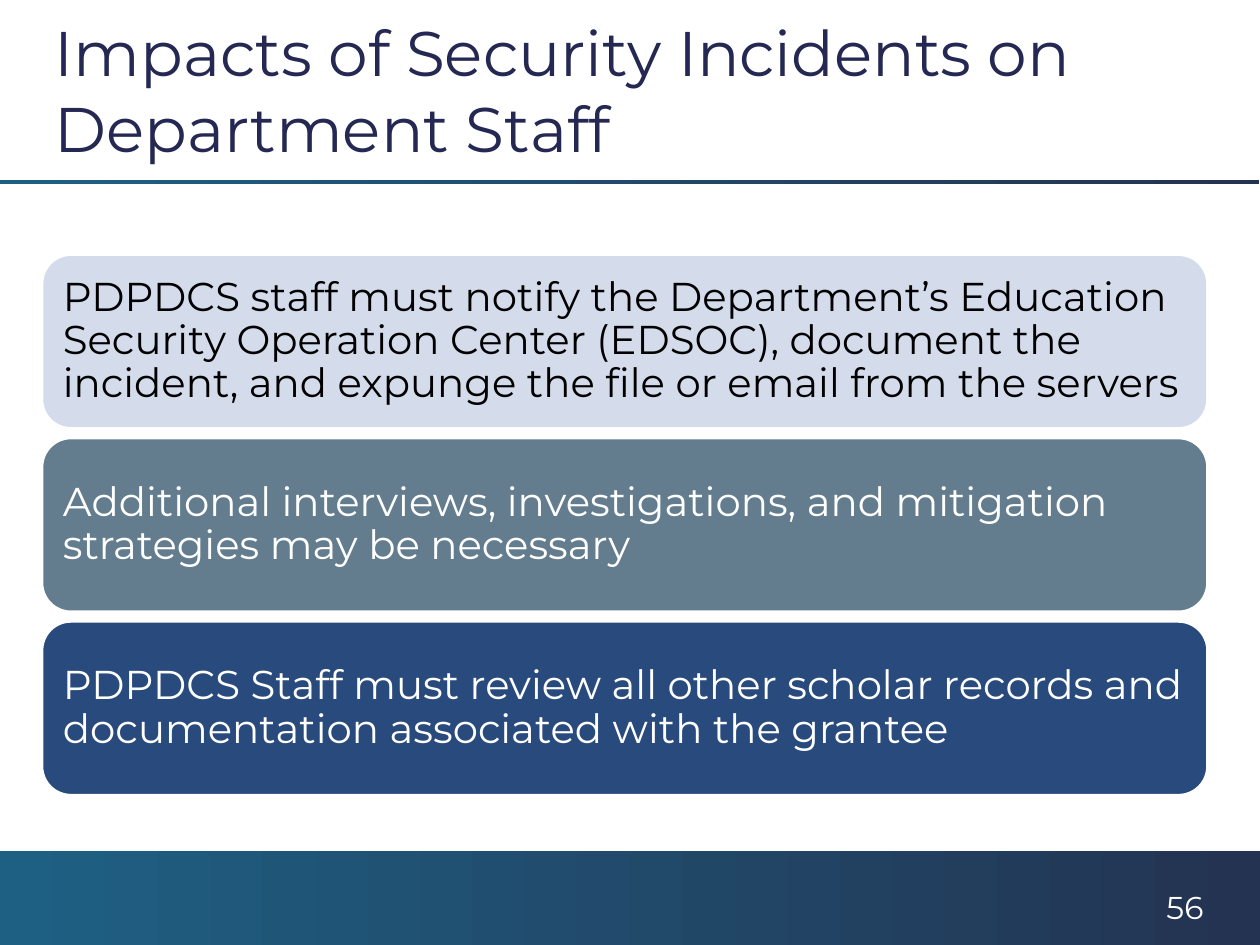
from dataclasses import dataclass
from pptx import Presentation as Deck
from pptx.dml.color import RGBColor as RGB
from pptx.enum.shapes import MSO_SHAPE as Kind
from pptx.enum.text import MSO_ANCHOR as Anchor, MSO_AUTO_SIZE as Fit, PP_ALIGN as Align
from pptx.util import Pt


@dataclass(frozen=True)
class Theme:
    font: str = "Montserrat"
    head: float = 36
    body: float = 23
    page: float = 18
    navy: str = "242852"
    black: str = "000000"
    white: str = "FFFFFF"
    fade: tuple = ("1E6083", "243352")
    cards: tuple = ("D4DCEC", "637D8E", "294A7C")


def write(frame, text, *, font, size, color, space=1, anchor=Anchor.TOP, pad=(7.2, 3.6)):
    frame.word_wrap = True
    frame.auto_size = Fit.NONE
    frame.vertical_anchor = anchor
    frame.margin_left = frame.margin_right = Pt(pad[0])
    frame.margin_top = frame.margin_bottom = Pt(pad[1])
    para = frame.paragraphs[0]
    para.alignment = Align.LEFT
    para.line_spacing = space
    run = para.add_run()
    run.text = text
    run.font.name = font
    run.font.size = Pt(size)
    run.font.color.rgb = RGB.from_string(color)


class Page:
    """Draws styled elements on one slide."""

    def __init__(self, slide, theme):
        self.slide = slide
        self.theme = theme

    def shape(self, kind, box):
        item = self.slide.shapes.add_shape(kind, *map(Pt, box))
        item.shadow.inherit = False
        return item

    def band(self, *box):
        item = self.shape(Kind.RECTANGLE, box)
        item.line.fill.background()
        item.fill.gradient()
        item.fill.gradient_angle = 0
        for stop, tint in zip(item.fill.gradient_stops, self.theme.fade):
            stop.color.rgb = RGB.from_string(tint)

    def title(self, text, *box):
        item = self.slide.shapes.title
        item.left, item.top, item.width, item.height = map(Pt, box)
        write(item.text_frame, text, font=self.theme.font, size=self.theme.head,
              color=self.theme.navy, anchor=Anchor.MIDDLE)

    def card(self, text, tint, ink, *box):
        item = self.shape(Kind.ROUNDED_RECTANGLE, box)
        item.fill.solid()
        item.fill.fore_color.rgb = RGB.from_string(tint)
        item.line.color.rgb = RGB.from_string(self.theme.white)
        item.line.width = Pt(1.5)
        write(item.text_frame, text, font=self.theme.font, size=self.theme.body,
              color=ink, space=0.9, anchor=Anchor.MIDDLE, pad=(7.2, 7.2))

    def number(self, text, *box):
        item = self.slide.shapes.add_textbox(*map(Pt, box))
        write(item.text_frame, text, font=self.theme.font, size=self.theme.page,
              color=self.theme.white)


def main():
    deck = Deck()
    deck.slide_width, deck.slide_height = Pt(720), Pt(540)
    theme = Theme()
    page = Page(deck.slides.add_slide(deck.slide_layouts[5]), theme)
    left, wide = 24, 666
    page.band(0, 486, 720, 54)
    page.band(-0.7, 103, 720, 2)
    page.title("Impacts of Security Incidents on Department Staff", left, 12.2, wide, 78)
    texts = (
        "PDPDCS staff must notify the Department’s Education Security Operation Center "
        "(EDSOC), document the incident, and expunge the file or email from the servers",
        "Additional interviews, investigations, and mitigation strategies may be necessary",
        "PDPDCS Staff must review all other scholar records and documentation "
        "associated with the grantee",
    )
    inks = (theme.black, theme.white, theme.white)
    top, tall, gap = 145.5, 99.3, 5.5
    for row, (text, tint, ink) in enumerate(zip(texts, theme.cards, inks)):
        page.card(text, tint, ink, left, top + row * (tall + gap), wide, tall)
    page.number("56", 659.5, 504, 42, 19.5)
    deck.save("out.pptx")


if __name__ == "__main__":
    main()
